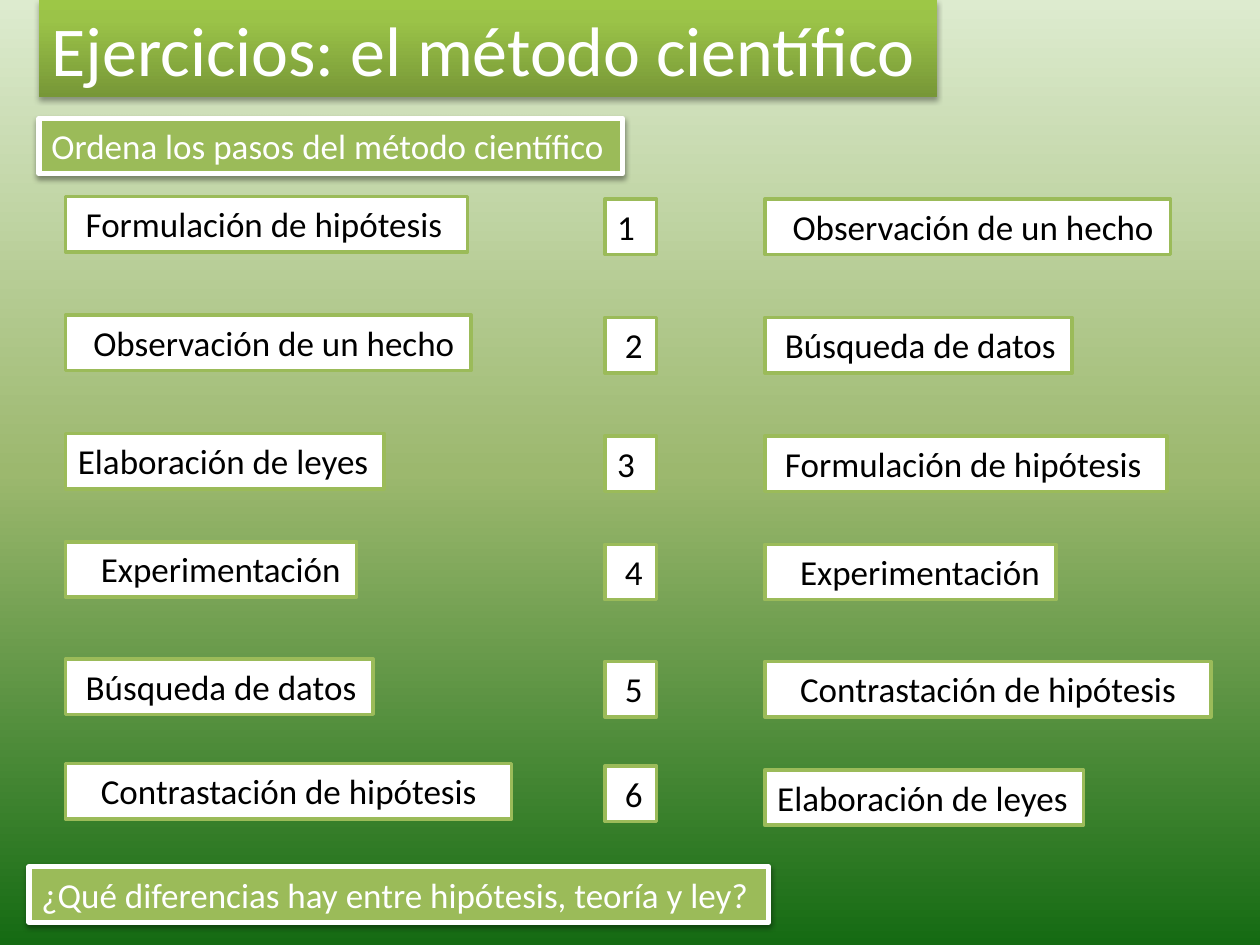
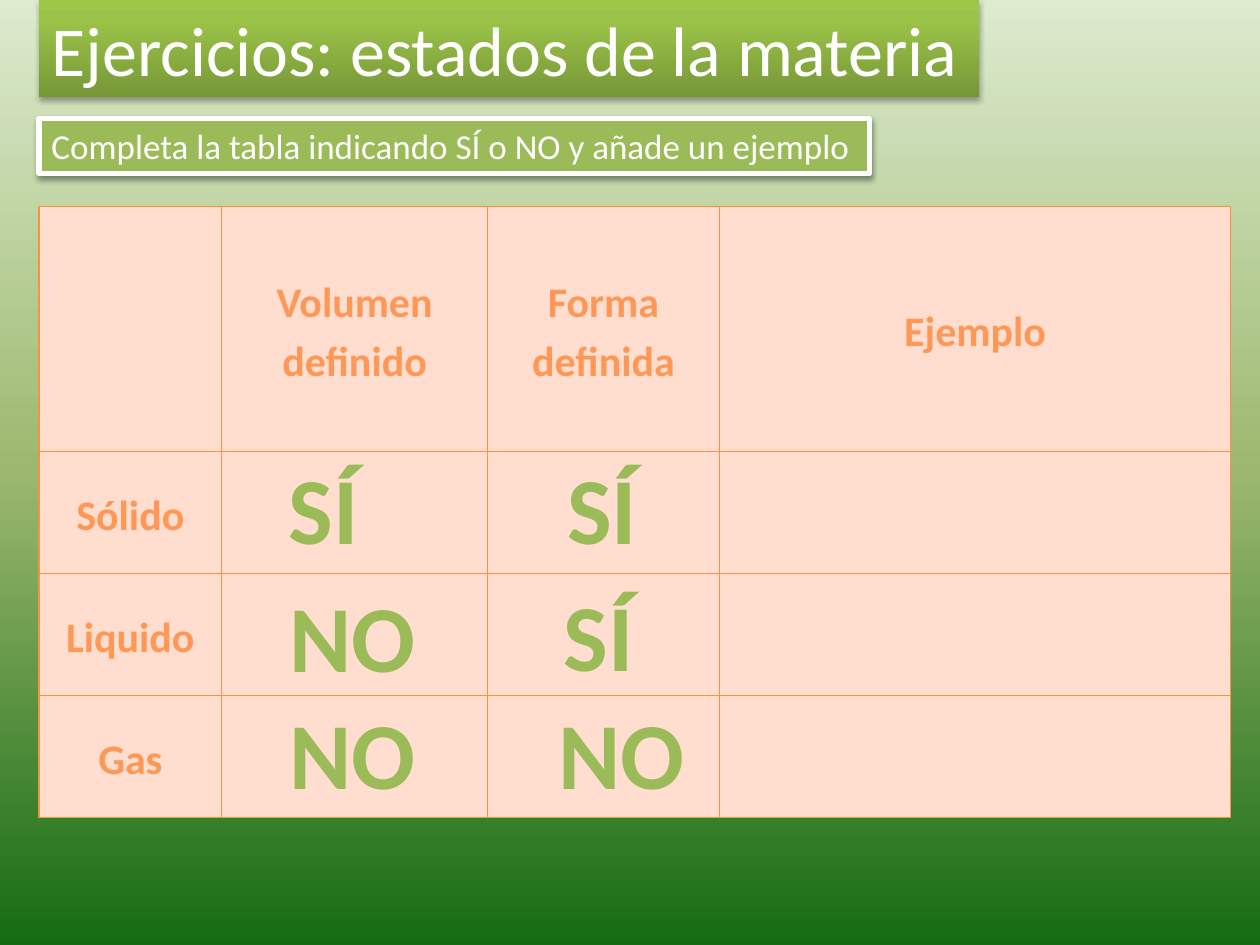
"""Builds two exercise slides: the scientific method and the states of matter."""
from pptx import Presentation
from pptx.dml.color import RGBColor
from pptx.enum.shapes import MSO_SHAPE as SHAPE
from pptx.enum.text import MSO_ANCHOR as ANCHOR, PP_ALIGN as ALIGN
from pptx.oxml import parse_xml
from pptx.oxml.ns import nsdecls
from pptx.util import Pt

PX = 9144
NS = nsdecls("a")
GREEN, WHITE, BLACK = "9BBB59", "FFFFFF", "000000"
PEACH, ORANGE = "FFDED0", "F69240"
SKY = (90, (0, "DDEBCF"), (50, "9CB86E"), (100, "156B13"))
BAND = (270, (0, "779737"), (80, "9BC348"), (100, "9DC746"))
EMBER = (90, (0, "9D4700"), (78, "FF9856"), (100, "FFF5F1"))

TITLE = {"fill": BAND, "shadow": (35, 1.8), "size": 40, "color": WHITE}
PROMPT = {"fill": GREEN, "line": (WHITE, 3), "shadow": (38, 1.6), "size": 20, "color": WHITE}
CARD = {"fill": WHITE, "line": (GREEN, 2), "size": 20, "color": BLACK}
ANSWER = {"size": 54, "color": GREEN, "bold": True, "align": ALIGN.CENTER, "left": 0,
          "outline": ("FEFEFE", 1.5)}


def paint(fill, color):
    """Fill with a hex colour, or with a gradient given as angle and stops."""
    fill.solid()
    if isinstance(color, str):
        fill.fore_color.rgb = RGBColor.from_string(color)
        return
    angle, *stops = color
    gs = "".join(f'<a:gs pos="{pos * 1000}"><a:srgbClr val="{c}"/></a:gs>' for pos, c in stops)
    xml = (f'<a:gradFill {NS} rotWithShape="1"><a:gsLst>{gs}</a:gsLst>'
           f'<a:lin ang="{angle * 60000}" scaled="0"/></a:gradFill>')
    parent = fill._xPr
    parent.replace(parent.find("{*}solidFill"), parse_xml(xml))


def dress(sp, at, text, style, indent=0):
    """Place a shape, apply its style and write its text."""
    for name, value in zip(("left", "top", "width", "height"), at):
        setattr(sp, name, value * PX)
    if "fill" in style:
        paint(sp.fill, style["fill"])
        sp.shadow.inherit = False
    if "line" in style:
        color, width = style["line"]
        paint(sp.line.fill, color)
        sp.line.width = Pt(width)
    if "shadow" in style:
        alpha, dist = style["shadow"]
        sp._element.spPr.find("{*}effectLst").append(parse_xml(
            f'<a:outerShdw {NS} blurRad="{Pt(3.1)}" dist="{Pt(dist)}" dir="5400000" rotWithShape="0">'
            f'<a:srgbClr val="{BLACK}"><a:alpha val="{alpha * 1000}"/></a:srgbClr></a:outerShdw>'))
    tf = sp.text_frame
    frame = {"word_wrap": True, "vertical_anchor": ANCHOR.TOP, "margin_top": 5 * PX,
             "margin_bottom": 5 * PX, "margin_right": 0,
             "margin_left": (style.get("left", 10) + indent) * PX}
    for name, value in frame.items():
        setattr(tf, name, value)
    p = tf.paragraphs[0]
    p.alignment = style.get("align", ALIGN.LEFT)
    r = p.add_run()
    r.text = text
    font = {"name": "Calibri", "size": Pt(style["size"]), "bold": style.get("bold", False)}
    for name, value in font.items():
        setattr(r.font, name, value)
    paint(r.font.fill, style["color"])
    if "outline" in style:
        color, width = style["outline"]
        r.font._element.insert(0, parse_xml(
            f'<a:ln {NS} w="{Pt(width)}"><a:solidFill><a:srgbClr val="{color}"/></a:solidFill></a:ln>'))


prs = Presentation()
prs.slide_width, prs.slide_height = 1000 * PX, 750 * PX
paint(prs.slide_master.background.fill, SKY)

HEADS = [("Ejercicios: el método científico", 713, "Ordena los pasos del método científico", 463),
         ("Ejercicios: estados de la materia", 746,
          "Completa la tabla indicando SÍ o NO y añade un ejemplo", 659)]
slides = []
for title, title_w, prompt, prompt_w in HEADS:
    s = prs.slides.add_slide(prs.slide_layouts[5])
    dress(s.shapes.title, (31, 0, title_w, 77), title, TITLE)
    sp = s.shapes.add_shape(SHAPE.RECTANGLE, 0, 0, 0, 0)
    dress(sp, (31, 94, prompt_w, 44), prompt, PROMPT)
    slides.append(s)
method, matter = slides

STEPS = {"Observación de un hecho": (322, 12), "Búsqueda de datos": (244, 6),
         "Formulación de hipótesis": (319, 6), "Experimentación": (231, 18),
         "Contrastación de hipótesis": (354, 18), "Elaboración de leyes": (253, 0)}
ordered = list(STEPS)
shuffled = [ordered[i] for i in (2, 0, 5, 3, 1, 4)]
tops = (156, 250, 344, 430, 523, 606)
cards = []
for i, top in enumerate(tops):
    for left, y, step in ((52, top, shuffled[i]), (607, top + (5 if i == 5 else 2), ordered[i])):
        width, indent = STEPS[step]
        cards.append((left, y, width, step, indent))
    cards.append((480, top + 2, 41, str(i + 1), 0 if i in (0, 2) else 6))
for left, top, width, text, indent in cards:
    sp = method.shapes.add_shape(SHAPE.RECTANGLE, 0, 0, 0, 0)
    dress(sp, (left, top, width, 44), text, CARD, indent)
sp = method.shapes.add_shape(SHAPE.RECTANGLE, 0, 0, 0, 0)
dress(sp, (23, 688, 587, 44), "¿Qué diferencias hay entre hipótesis, teoría y ley?", PROMPT)

ROWS = [("", "Volumen definido", "Forma definida", "Ejemplo"),
        ("Sólido", "", "", ""), ("Liquido", "", "", ""), ("Gas", "", "", "")]
table = matter.shapes.add_table(4, 4, 31 * PX, 164 * PX, 945 * PX, 484 * PX).table
table.first_row = table.horz_banding = False
for col, width in zip(table.columns, (145, 211, 184, 406)):
    col.width = width * PX
for row, height in zip(table.rows, (194, 97, 97, 97)):
    row.height = height * PX
for row, texts in zip(table.rows, ROWS):
    for cell, text in zip(row.cells, texts):
        paint(cell.fill, PEACH)
        for i, side in enumerate("LRTB"):
            cell._tc.tcPr.insert(i, parse_xml(
                f'<a:ln{side} {NS} w="{Pt(0.75)}"><a:solidFill><a:srgbClr val="{ORANGE}"/>'
                f'</a:solidFill></a:ln{side}>'))
        layout = {"vertical_anchor": ANCHOR.MIDDLE, "margin_left": 7 * PX,
                  "margin_right": 7 * PX, "margin_top": 0, "margin_bottom": 0}
        for name, value in layout.items():
            setattr(cell, name, value)
        if text:
            p = cell.text_frame.paragraphs[0]
            p.alignment, p.line_spacing = ALIGN.CENTER, 1.15
            r = p.add_run()
            r.text = text
            for name, value in {"name": "Calibri", "size": Pt(24), "bold": True}.items():
                setattr(r.font, name, value)
            paint(r.font.fill, EMBER)

ANSWERS = [(219, 352, "SÍ"), (440, 352, "SÍ"), (219, 454, "NO"),
           (437, 453, "SÍ"), (219, 547, "NO"), (433, 547, "NO")]
for left, top, text in ANSWERS:
    sp = matter.shapes.add_textbox(0, 0, 0, 0)
    dress(sp, (left, top, 76 if text == "SÍ" else 121, 101), text, ANSWER)

prs.save("out.pptx")
